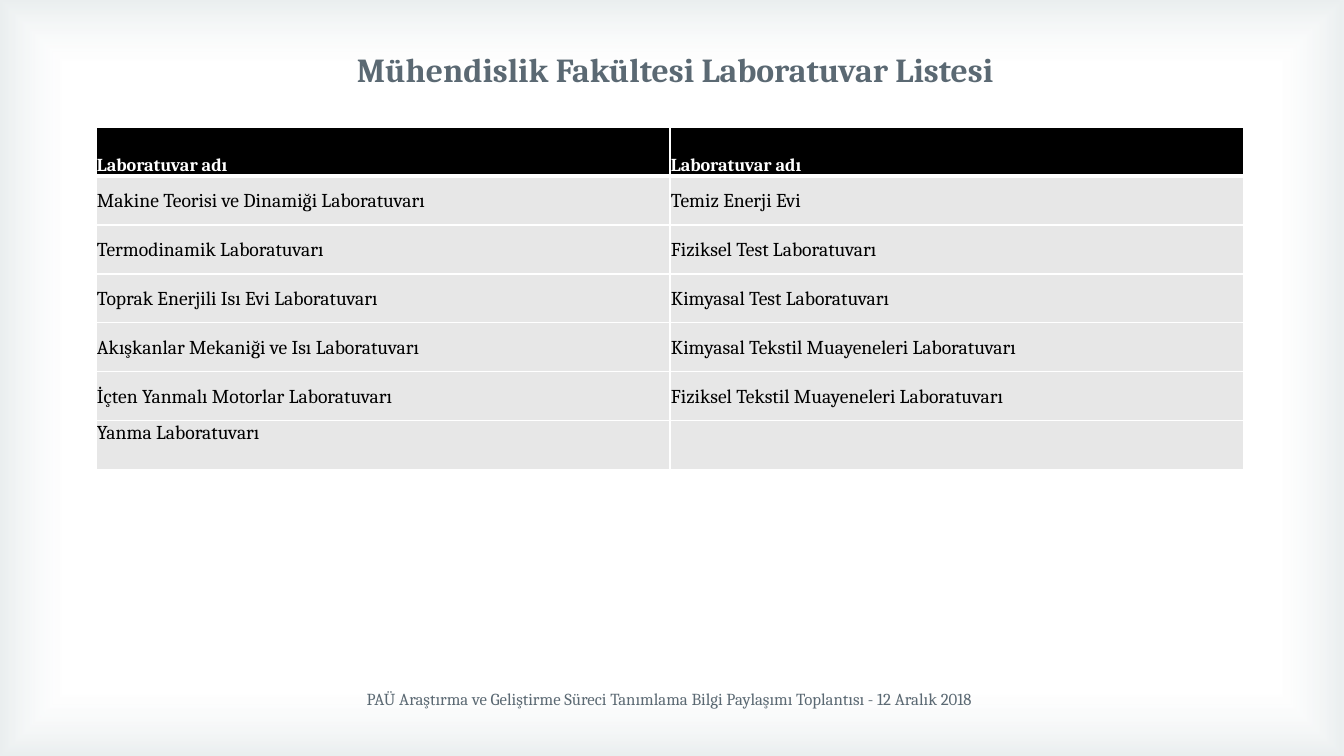
import pptx
import pptx.util
import pptx.oxml
import pptx.oxml.ns
import pptx.dml.color
import pptx.enum.shapes
import pptx.enum.text
from dataclasses import dataclass

ALIGN = pptx.enum.text.PP_ALIGN
ANCHOR = pptx.enum.text.MSO_ANCHOR
NS = pptx.oxml.ns.nsdecls("a")


@dataclass(frozen=True)
class Theme:
    font: str = "Cambria"
    slate: str = "5B6973"
    mist: str = "A4B7BB"
    white: str = "FFFFFF"
    black: str = "000000"
    gray: str = "E7E7E7"
    title: int = 24
    body: int = 14
    head: int = 13
    foot: int = 12


def px(n):
    return pptx.util.Emu(round(n * 914400 / 100.8))


def rgb(code):
    return pptx.dml.color.RGBColor.from_string(code)


class Deck:
    def __init__(self, theme):
        self.theme = theme
        self.prs = pptx.Presentation()
        self.prs.slide_width, self.prs.slide_height = px(1344), px(756)
        self.slide = self.prs.slides.add_slide(self.prs.slide_layouts[5])

    def label(self, frame, text, size, color, bold=False, align=ALIGN.CENTER):
        frame.text = text
        para = frame.paragraphs[0]
        para.alignment = align
        font = para.font
        font.name, font.size, font.bold = self.theme.font, pptx.util.Pt(size), bold
        font.color.rgb = rgb(color)

    def glow(self):
        """Tint the slide edges with a rectangular gradient behind everything."""
        shape = self.slide.shapes.add_shape(
            pptx.enum.shapes.MSO_SHAPE.RECTANGLE, 0, 0, px(1344), px(756))
        shape.shadow.inherit = False
        shape.line.fill.background()
        stops = "".join(
            f'<a:gs pos="{pos}000"><a:srgbClr val="{color}"><a:alpha val="{alpha}000"/></a:srgbClr></a:gs>'
            for pos, color, alpha in ((83, self.theme.white, 11), (100, self.theme.mist, 23)))
        grad = pptx.oxml.parse_xml(
            f'<a:gradFill {NS} rotWithShape="1"><a:gsLst>{stops}</a:gsLst><a:path path="rect">'
            '<a:fillToRect l="50000" t="50000" r="50000" b="50000"/></a:path></a:gradFill>')
        shape.element.spPr.find(pptx.oxml.ns.qn("a:prstGeom")).addnext(grad)
        shape.element.getparent().insert(2, shape.element)

    def title(self, text, x, y, w, h):
        shape = self.slide.shapes.title
        shape.left, shape.top, shape.width, shape.height = map(px, (x, y, w, h))
        shape.text_frame.vertical_anchor = ANCHOR.MIDDLE
        self.label(shape.text_frame, text, self.theme.title, self.theme.slate, True)

    def foot(self, text, x, y, w, h):
        frame = self.slide.shapes.add_textbox(*map(px, (x, y, w, h))).text_frame
        frame.word_wrap = True
        frame.vertical_anchor = ANCHOR.MIDDLE
        self.label(frame, text, self.theme.foot, self.theme.slate)

    def edge(self, cell, top, low):
        """Draw white cell borders; top and low are widths in points."""
        props = cell._tc.get_or_add_tcPr()
        for i, (side, width) in enumerate((("L", 1), ("R", 1), ("T", top), ("B", low))):
            props.insert(i, pptx.oxml.parse_xml(
                f'<a:ln{side} {NS} w="{width * 12700}"><a:solidFill>'
                f'<a:srgbClr val="{self.theme.white}"/></a:solidFill></a:ln{side}>'))

    def table(self, rows, x, y, w, high):
        look = self.theme
        grid = self.slide.shapes.add_table(
            len(rows), len(rows[0]), px(x), px(y), px(w), px(high * len(rows))).table
        grid.horz_banding = False
        for r, row in enumerate(rows):
            for c, text in enumerate(row):
                cell, head = grid.cell(r, c), r == 0
                cell.margin_left = cell.margin_right = cell.margin_top = px(1)
                cell.margin_bottom = 0
                cell.fill.solid()
                cell.fill.fore_color.rgb = rgb(look.black if head else look.gray)
                self.edge(cell, 3 if r == 1 else 1, 3 if head else 1)
                if head:
                    cell.vertical_anchor = ANCHOR.BOTTOM
                    self.label(cell.text_frame, text, look.head, look.white, True, ALIGN.LEFT)
                else:
                    last = r == len(rows) - 1
                    cell.vertical_anchor = ANCHOR.TOP if last else ANCHOR.MIDDLE
                    self.label(cell.text_frame, text, look.body, look.black, align=ALIGN.JUSTIFY)


LABS = [
    ("Laboratuvar adı", "Laboratuvar adı"),
    ("Makine Teorisi ve Dinamiği Laboratuvarı", "Temiz Enerji Evi"),
    ("Termodinamik Laboratuvarı", "Fiziksel Test Laboratuvarı"),
    ("Toprak Enerjili Isı Evi Laboratuvarı", "Kimyasal Test Laboratuvarı"),
    ("Akışkanlar Mekaniği ve Isı Laboratuvarı", "Kimyasal Tekstil Muayeneleri Laboratuvarı"),
    ("İçten Yanmalı Motorlar Laboratuvarı", "Fiziksel Tekstil Muayeneleri Laboratuvarı"),
    ("Yanma Laboratuvarı", ""),
]


def main():
    deck = Deck(Theme())
    deck.glow()
    deck.title("Mühendislik Fakültesi Laboratuvar Listesi", 105, 49, 1140, 41)
    deck.table(LABS, 96, 127, 1148, 49)
    deck.foot("PAÜ Araştırma ve Geliştirme Süreci Tanımlama Bilgi Paylaşımı Toplantısı"
              " - 12 Aralık 2018", 155, 679, 1029, 40)
    deck.prs.save("out.pptx")


if __name__ == "__main__":
    main()
